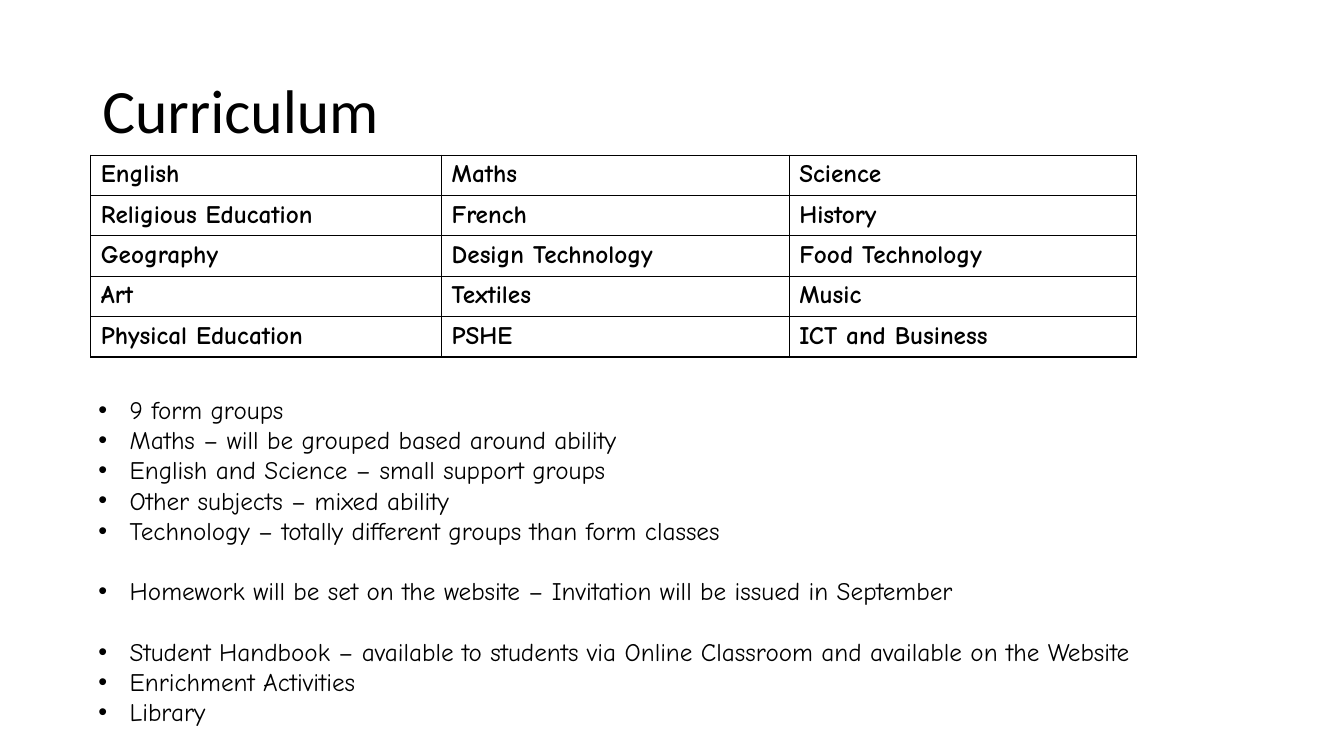
"""Build the Curriculum slide: a subject table above notes on groups and homework."""
from dataclasses import dataclass

from lxml import etree
from pptx import Presentation
from pptx import util as u
from pptx.dml.color import RGBColor
from pptx.enum import text
from pptx.oxml import ns

BLACK = "000000"
WHITE = "FFFFFF"
HAND_FONT = "Comic Neue"
ROW_HEIGHT = 0.99
COLUMN_WIDTHS = (8.84, 8.76, 8.76)
BLANK_LINE = 21.6
BULLET_INDENT = u.Cm(0.79)


@dataclass(frozen=True)
class Note:
    words: str
    gap: float = 0


SUBJECTS = (
    ("English", "Maths", "Science"),
    ("Religious Education", "French", "History"),
    ("Geography", "Design Technology", "Food Technology"),
    ("Art", "Textiles", "Music"),
    ("Physical Education", "PSHE", "ICT and Business"),
)

NOTES = (
    Note("9 form groups"),
    Note("Maths – will be grouped based around ability"),
    Note("English and Science – small support groups"),
    Note("Other subjects – mixed ability"),
    Note("Technology – totally different groups than form classes"),
    Note("Homework will be set on the website – Invitation will be issued in September", BLANK_LINE),
    Note("Student Handbook – available to students via Online Classroom and available on the Website", BLANK_LINE),
    Note("Enrichment Activities"),
    Note("Library"),
)


def color(value: str) -> RGBColor:
    return RGBColor.from_string(value)


def write(para, words: str, *, font: str = HAND_FONT, size: float = 18, bold: bool = False) -> None:
    span = para.add_run()
    span.text = words
    span.font.name = font
    span.font.size = u.Pt(size)
    span.font.bold = bold
    span.font.color.rgb = color(BLACK)


def add_box(page, left: float, top: float, width: float, height: float):
    box = page.shapes.add_textbox(u.Cm(left), u.Cm(top), u.Cm(width), u.Cm(height))
    box.text_frame.word_wrap = True
    return box.text_frame


def add_bullet(para) -> None:
    properties = para._p.get_or_add_pPr()
    properties.set("marL", str(BULLET_INDENT))
    properties.set("indent", str(-BULLET_INDENT))
    etree.SubElement(properties, ns.qn("a:buFont"), typeface="Arial")
    etree.SubElement(properties, ns.qn("a:buChar"), char="•")


def add_borders(cell) -> None:
    properties = cell._tc.get_or_add_tcPr()
    for place, side in enumerate(("lnL", "lnR", "lnT", "lnB")):
        line = etree.Element(ns.qn(f"a:{side}"), w=str(u.Pt(1)))
        fill = etree.SubElement(line, ns.qn("a:solidFill"))
        etree.SubElement(fill, ns.qn("a:srgbClr"), val=BLACK)
        properties.insert(place, line)


def add_title(page) -> None:
    frame = add_box(page, 2.33, 1.01, 29.21, 3.68)
    frame.vertical_anchor = text.MSO_ANCHOR.MIDDLE
    para = frame.paragraphs[0]
    para.line_spacing = 0.9
    write(para, "Curriculum", font="Calibri", size=44)


def add_subjects(page) -> None:
    rows, columns = len(SUBJECTS), len(COLUMN_WIDTHS)
    table = page.shapes.add_table(
        rows, columns, u.Cm(2.29), u.Cm(3.91), u.Cm(sum(COLUMN_WIDTHS)), u.Cm(rows * ROW_HEIGHT)
    ).table
    table.first_row = table.horz_banding = False
    for column, width in zip(table.columns, COLUMN_WIDTHS):
        column.width = u.Cm(width)
    for row, subjects in enumerate(SUBJECTS):
        for column, subject in enumerate(subjects):
            cell = table.cell(row, column)
            cell.fill.solid()
            cell.fill.fore_color.rgb = color(WHITE)
            add_borders(cell)
            write(cell.text_frame.paragraphs[0], subject, bold=True)


def add_notes(page) -> None:
    frame = add_box(page, 2.23, 9.81, 29.28, 9.5)
    frame.auto_size = text.MSO_AUTO_SIZE.SHAPE_TO_FIT_TEXT
    for number, note in enumerate(NOTES):
        para = frame.add_paragraph() if number else frame.paragraphs[0]
        add_bullet(para)
        if note.gap:
            para.space_before = u.Pt(note.gap)
        write(para, note.words)


def main() -> None:
    deck = Presentation()
    deck.slide_width, deck.slide_height = u.Cm(33.87), u.Cm(19.05)
    page = deck.slides.add_slide(deck.slide_layouts[6])
    add_title(page)
    add_subjects(page)
    add_notes(page)
    deck.save("out.pptx")


if __name__ == "__main__":
    main()
